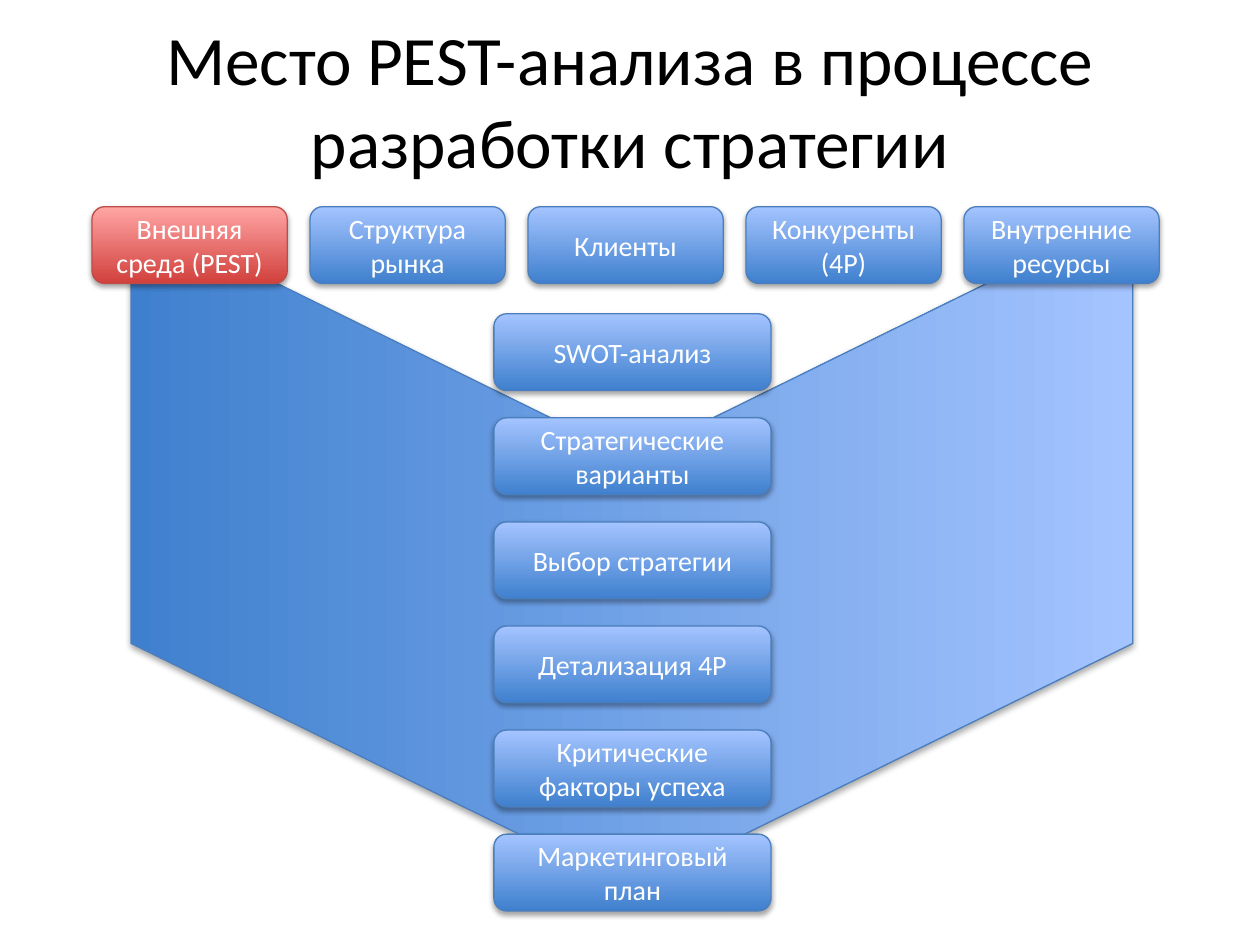
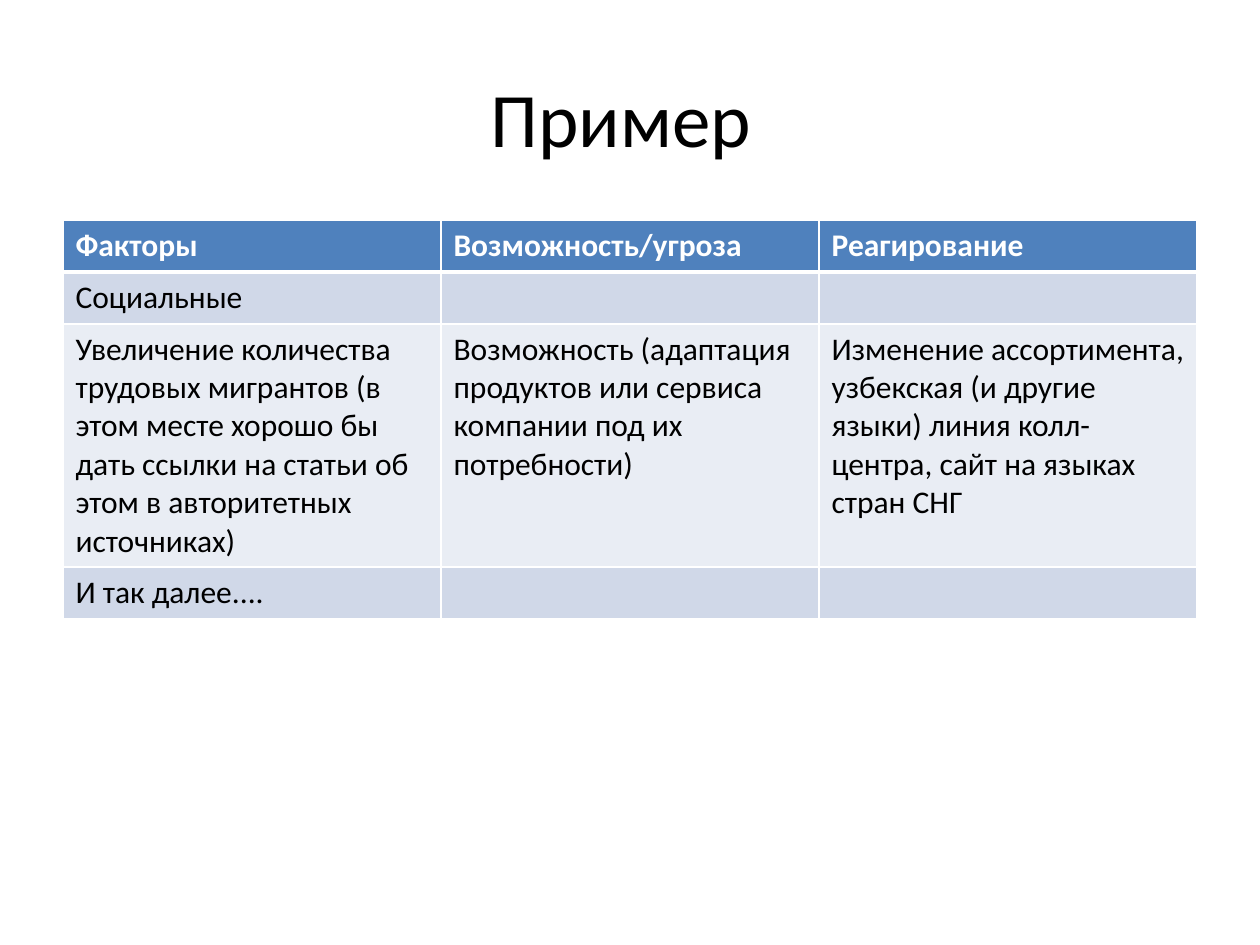
from lxml import etree
from pptx import Presentation
from pptx import util as u
from pptx.dml.color import RGBColor
from pptx.enum import shapes, text
from pptx.oxml import ns

FONT = "Calibri"
COLORS = {
    "ink": "000000", "white": "FFFFFF",
    "blue_dark": "3F80CE", "blue_light": "A4C4FF", "blue_line": "4B7EBC",
    "red_dark": "D1403C", "red_light": "FFA6A5", "red_line": "BF4C48",
    "header": "4F81BD", "band": "D0D8E8", "pale": "E9EDF4",
}
INPUTS = ["Внешняя среда (PEST)", "Структура рынка", "Клиенты",
          "Конкуренты (4P)", "Внутренние ресурсы"]
STEPS = ["SWOT-анализ", "Стратегические варианты", "Выбор стратегии",
         "Детализация 4P", "Критические факторы успеха", "Маркетинговый план"]
FACTORS = [
    ["Факторы", "Возможность/угроза", "Реагирование"],
    ["Социальные", "", ""],
    ["Увеличение количества трудовых мигрантов (в этом месте хорошо бы дать "
     "ссылки на статьи об этом в авторитетных источниках)",
     "Возможность (адаптация продуктов или сервиса компании под их потребности)",
     "Изменение ассортимента, узбекская (и другие языки) линия колл-центра, "
     "сайт на языках стран СНГ"],
    ["И так далее....", "", ""],
]


def rgb(name):
    return RGBColor.from_string(COLORS[name])


def inches(*lengths):
    return [u.Inches(length) for length in lengths]


def format_text(frame, size, color, align, bold=False):
    for paragraph in frame.paragraphs:
        paragraph.alignment = align
        for run in paragraph.runs:
            run.font.name = FONT
            run.font.size = u.Pt(size)
            run.font.bold = bold
            run.font.color.rgb = rgb(color)


def add_titled_slide(deck, heading, top, size):
    slide = deck.slides.add_slide(deck.slide_layouts[5])
    title = slide.shapes.title
    title.left, title.top, title.width, title.height = inches(0.5, top, 9, 1.25)
    title.text_frame.text = heading
    title.text_frame.vertical_anchor = text.MSO_ANCHOR.MIDDLE
    format_text(title.text_frame, size, "ink", text.PP_ALIGN.CENTER)
    return slide


def add_glossy(slide, preset, box, tone="blue"):
    shape = slide.shapes.add_shape(preset, *inches(*box))
    shape.fill.gradient()
    shape.fill.gradient_angle = 90
    for stop, shade, position in zip(shape.fill.gradient_stops, ("dark", "light"), (0, 1)):
        stop.color.rgb = rgb(f"{tone}_{shade}")
        stop.position = position
    shape.line.color.rgb = rgb(f"{tone}_line")
    shape.line.width = u.Pt(0.75)
    shape.shadow.inherit = False
    effects = shape._element.spPr.find(ns.qn("a:effectLst"))
    shadow = etree.SubElement(effects, ns.qn("a:outerShdw"), blurRad=str(u.Pt(3.1)),
                              dist=str(u.Pt(1.8)), dir="5400000", rotWithShape="0")
    color = etree.SubElement(shadow, ns.qn("a:srgbClr"), val=COLORS["ink"])
    etree.SubElement(color, ns.qn("a:alpha"), val="35000")
    return shape


def add_stage(slide, label, box, tone="blue"):
    stage = add_glossy(slide, shapes.MSO_SHAPE.ROUNDED_RECTANGLE, box, tone)
    stage.text_frame.text = label
    stage.text_frame.word_wrap = True
    stage.text_frame.vertical_anchor = text.MSO_ANCHOR.MIDDLE
    format_text(stage.text_frame, 16, "white", text.PP_ALIGN.CENTER)


def add_funnel(slide, box):
    left, top, width, height = box
    funnel = add_glossy(slide, shapes.MSO_SHAPE.CHEVRON,
                        (left + (width - height) / 2, top + (height - width) / 2,
                         height, width))
    funnel.rotation = 90
    funnel.adjustments[0] = 0.363


def add_inputs(slide, box):
    left, top, width, height = box
    stage_width = 1.55
    pitch = (width - stage_width) / (len(INPUTS) - 1)
    for index, label in enumerate(INPUTS):
        add_stage(slide, label, (left + index * pitch, top, stage_width, height),
                  "blue" if index else "red")


def add_steps(slide, box):
    left, top, width, height = box
    stage_height = 0.61
    pitch = (height - stage_height) / (len(STEPS) - 1)
    for index, label in enumerate(STEPS):
        add_stage(slide, label, (left, top + index * pitch, width, stage_height))


def add_borders(cell, bottom_width):
    properties = cell._tc.get_or_add_tcPr()
    for index, side in enumerate("LRTB"):
        width = bottom_width if side == "B" else 1
        border = etree.Element(ns.qn(f"a:ln{side}"), w=str(u.Pt(width)))
        fill = etree.SubElement(border, ns.qn("a:solidFill"))
        etree.SubElement(fill, ns.qn("a:srgbClr"), val=COLORS["white"])
        properties.insert(index, border)


def add_factor_table(slide, box):
    heights = [0.41, 0.41, 1.9, 0.41]
    table = slide.shapes.add_table(len(FACTORS), len(FACTORS[0]), *inches(*box)).table
    for column in table.columns:
        column.width = u.Inches(box[2] / len(FACTORS[0]))
    for index, (row, height, entries) in enumerate(zip(table.rows, heights, FACTORS)):
        is_header = index == 0
        row.height = u.Inches(height)
        for cell, entry in zip(row.cells, entries):
            cell.text_frame.text = entry
            cell.fill.solid()
            cell.fill.fore_color.rgb = rgb(
                "header" if is_header else "band" if index % 2 else "pale")
            add_borders(cell, 3 if is_header else 1)
            format_text(cell.text_frame, 18, "white" if is_header else "ink",
                        text.PP_ALIGN.LEFT, is_header)


def build_strategy_slide(deck):
    slide = add_titled_slide(
        deck, "Место PEST-анализа в процессе разработки стратегии", 0.16, 39.6)
    add_funnel(slide, (1.04, 1.68, 7.95, 5.38))
    tree = slide.shapes._spTree
    tree.append(slide.shapes.title._element)
    add_inputs(slide, (0.73, 1.64, 8.47, 0.61))
    add_steps(slide, (3.92, 2.49, 2.2, 4.74))


def build_example_slide(deck):
    slide = add_titled_slide(deck, "Пример ", 0.3, 44)
    add_factor_table(slide, (0.5, 1.75, 9, 3.13))


def main():
    deck = Presentation()
    deck.slide_width, deck.slide_height = inches(10, 7.5)
    build_strategy_slide(deck)
    build_example_slide(deck)
    deck.save("out.pptx")


if __name__ == "__main__":
    main()
